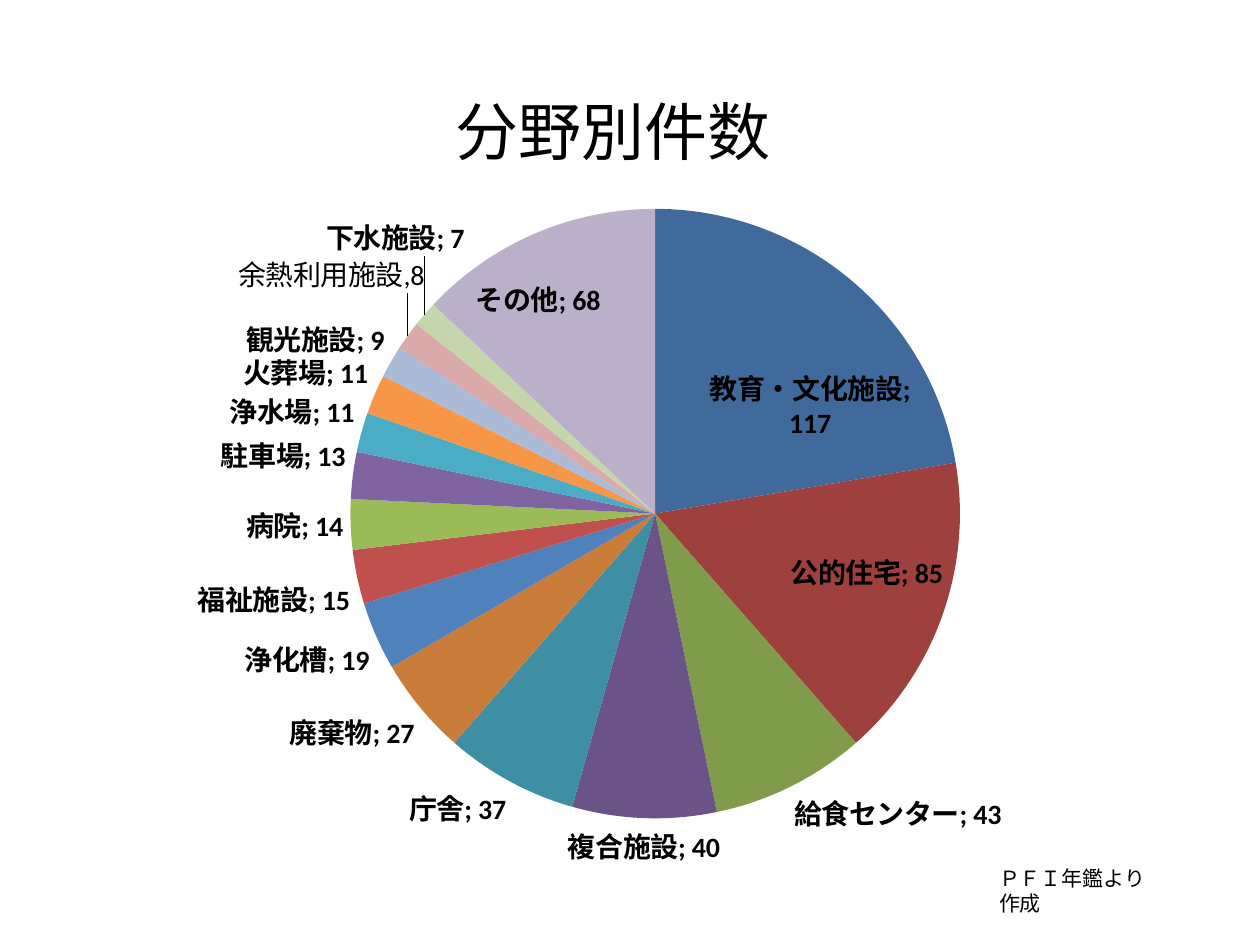
from typing import NamedTuple

from lxml.etree import SubElement
from pptx import Presentation
from pptx.chart.data import CategoryChartData
from pptx.dml.color import RGBColor
from pptx.enum.chart import XL_CHART_TYPE, XL_LABEL_POSITION as Pos
from pptx.enum.text import MSO_ANCHOR, PP_ALIGN
from pptx.oxml import parse_xml
from pptx.oxml.ns import nsdecls, qn
from pptx.util import Cm, Pt

FONT = "Calibri"
COLORS = {
    "text": "000000",
    "blue": "406A9C", "red": "9E413E", "green": "809B4A",
    "purple": "6B5287", "teal": "3E8FA3", "orange": "CA7C3A",
    "mid blue": "4F81BD", "mid red": "C0504D", "mid green": "9BBB59",
    "mid purple": "8064A2", "mid teal": "4BACC6", "mid orange": "F79646",
    "pale blue": "AABAD7", "pale red": "D9AAA9", "pale green": "C6D6AC",
    "pale purple": "BAB0C9",
}


class Field(NamedTuple):
    name: str
    count: int
    color: str


class LabelShift(NamedTuple):
    """Label offset from its usual place, as fractions of the chart size."""
    index: int
    position: Pos
    x: float
    y: float
    text: str = ""


FIELDS = [
    Field("教育・文化施設", 117, "blue"),
    Field("公的住宅", 85, "red"),
    Field("給食センター", 43, "green"),
    Field("複合施設", 40, "purple"),
    Field("庁舎", 37, "teal"),
    Field("廃棄物", 27, "orange"),
    Field("浄化槽", 19, "mid blue"),
    Field("福祉施設", 15, "mid red"),
    Field("病院", 14, "mid green"),
    Field("駐車場", 13, "mid purple"),
    Field("浄水場", 11, "mid teal"),
    Field("火葬場", 11, "mid orange"),
    Field("観光施設", 9, "pale blue"),
    Field("余熱利用施設", 8, "pale red"),
    Field("下水施設", 7, "pale green"),
    Field("その他", 68, "pale purple"),
]
SHIFTS = [
    LabelShift(0, Pos.CENTER, 0.05, 0.01),
    LabelShift(1, Pos.CENTER, 0.06, 0.01),
    LabelShift(13, Pos.OUTSIDE_END, 0.02, -0.05, "余熱利用施設,8"),
    LabelShift(14, Pos.OUTSIDE_END, 0.04, -0.07),
    LabelShift(15, Pos.CENTER, -0.05, -0.1),
]


def rgb(name: str) -> RGBColor:
    return RGBColor.from_string(COLORS[name])


def style_font(font, size: float, bold: bool = False) -> None:
    font.name, font.size, font.bold = FONT, Pt(size), bold
    font.color.rgb = rgb("text")


def manual_layout(**values):
    layout = parse_xml(f"<c:layout {nsdecls('c')}><c:manualLayout/></c:layout>")
    for tag, value in values.items():
        SubElement(layout[0], qn(f"c:{tag}")).set("val", str(value))
    return layout


def shift_label(ser, shift: LabelShift) -> None:
    label = ser.points[shift.index].data_label
    if shift.text:
        p = label.text_frame.paragraphs[0]
        p.text = shift.text
        style_font(p.runs[0].font, 16)
    else:
        style_font(label.font, 16, bold=True)
    label.position = shift.position
    for d_lbl in ser._element.iter(qn("c:dLbl")):
        if d_lbl.find(qn("c:idx")).get("val") == str(shift.index):
            d_lbl.insert(1, manual_layout(x=shift.x, y=shift.y))
            d_lbl.find(qn("c:showCatName")).set("val", "1")


def add_pie(s) -> None:
    data = CategoryChartData()
    data.categories = [f.name for f in FIELDS]
    data.add_series("件数", [f.count for f in FIELDS])
    chart = s.shapes.add_chart(XL_CHART_TYPE.PIE, Cm(1.3), Cm(2.92),
                               Cm(22.86), Cm(15.19), data).chart
    chart.has_title = chart.has_legend = False
    style_font(chart.font, 10)
    plot = chart.plots[0]
    plot.vary_by_categories = True
    ser = plot.series[0]
    for i, field in enumerate(FIELDS):
        fill = ser.points[i].format.fill
        fill.solid()
        fill.fore_color.rgb = rgb(field.color)

    labels = ser.data_labels
    labels.show_value = labels.show_category_name = True
    labels.position = Pos.OUTSIDE_END
    style_font(labels.font, 16, bold=True)
    for shift in SHIFTS:
        shift_label(ser, shift)
    for el in list(ser._element.iter(qn("c:showBubbleSize"))):
        el.addnext(parse_xml(f"<c:separator {nsdecls('c')}>; </c:separator>"))

    area = chart._chartSpace.find(".//" + qn("c:plotArea"))
    for old in area.findall(qn("c:layout")):
        area.remove(old)
    area.insert(0, manual_layout(layoutTarget="inner", xMode="edge", yMode="edge",
                                 x=0.252, y=0.085, w=0.538, h=0.809))


def add_title(s) -> None:
    title = s.shapes.title
    title.left, title.top, title.width, title.height = (
        Cm(8.89), Cm(1.73), Cm(6.93), Cm(1.8))
    tf = title.text_frame
    tf.word_wrap = False
    tf.vertical_anchor = MSO_ANCHOR.MIDDLE
    p = tf.paragraphs[0]
    p.text = "分野別件数"
    p.alignment = PP_ALIGN.CENTER
    style_font(p.font, 36)


def add_source_note(s) -> None:
    tf = s.shapes.add_textbox(Cm(19.89), Cm(17.32), Cm(3.61), Cm(0.76)).text_frame
    tf.word_wrap = True
    p = tf.paragraphs[0]
    p.text = "ＰＦＩ年鑑より作成"
    style_font(p.font, 12)


def main() -> None:
    prs = Presentation()
    prs.slide_width, prs.slide_height = Cm(25.4), Cm(19.05)
    s = prs.slides.add_slide(prs.slide_layouts[5])
    add_pie(s)
    add_title(s)
    add_source_note(s)
    prs.save("out.pptx")


if __name__ == "__main__":
    main()
